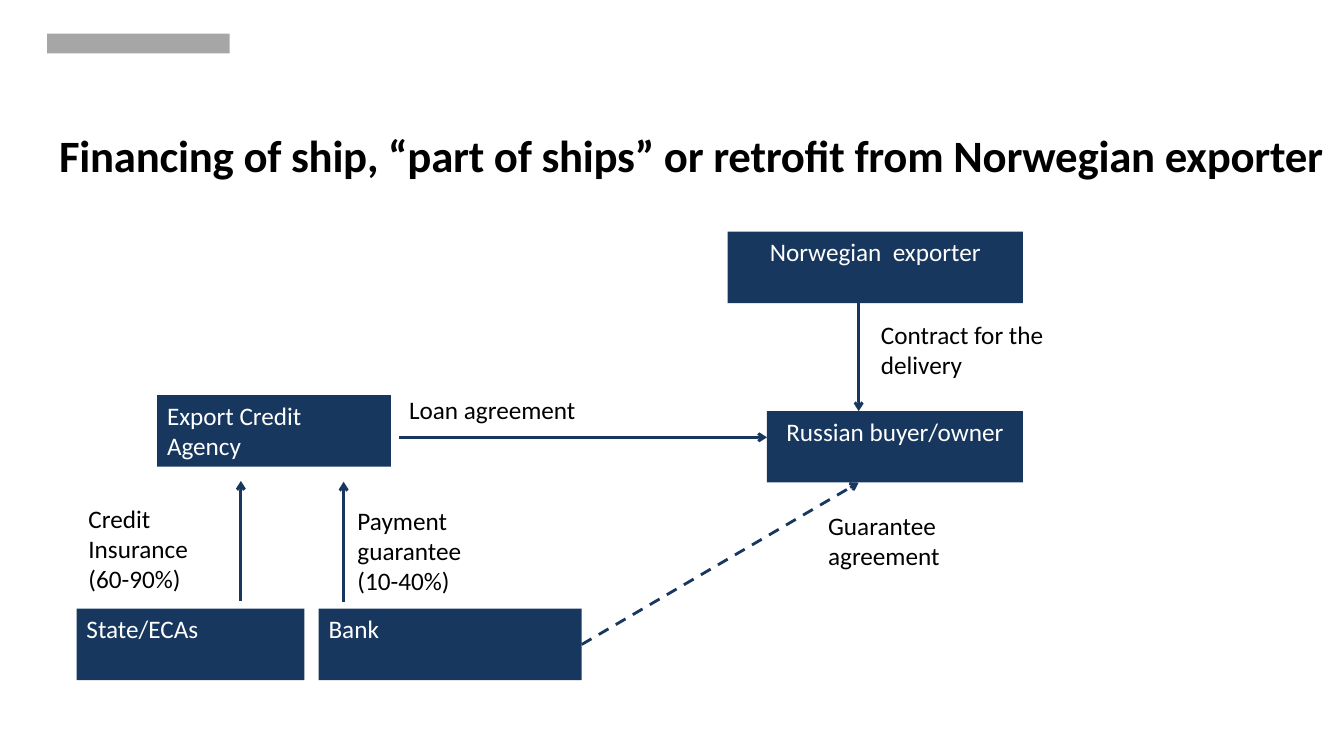
from collections import namedtuple
from dataclasses import dataclass

from lxml.etree import SubElement
from pptx import Presentation
from pptx.dml.color import RGBColor
from pptx.enum.dml import MSO_LINE_DASH_STYLE as Dash
from pptx.enum.shapes import MSO_CONNECTOR as Connector, MSO_SHAPE as Shape
from pptx.enum.text import MSO_ANCHOR as Anchor, PP_ALIGN as Align
from pptx.oxml.ns import qn
from pptx.util import Cm, Pt

Box = namedtuple("Box", "left top width height")


@dataclass(frozen=True)
class Theme:
    navy: RGBColor = RGBColor(0x17, 0x37, 0x5E)
    black: RGBColor = RGBColor(0, 0, 0)
    white: RGBColor = RGBColor(255, 255, 255)
    grey: RGBColor = RGBColor(0xA6, 0xA6, 0xA6)
    font: str = "Calibri"
    title_size: int = 32
    title_spacing: str = "-20"
    body_size: int = 18
    line_width: int = 2


THEME = Theme()
PARTY_HEIGHT = 1.8

PARTIES = [
    ("Norwegian  exporter", 16.41, 0, 7.44, Align.CENTER),
    ("Russian buyer/owner", 17.4, 4.52, 6.45, Align.CENTER),
    ("Export Credit Agency", 2.03, 4.12, 5.89, Align.LEFT),
    ("State/ECAs", 0, 9.5, 5.74, Align.LEFT),
    ("Bank", 6.1, 9.5, 6.63, Align.LEFT),
]
FLOWS = [
    ((19.71, 1.8), (19.71, 4.52), Dash.SOLID),
    ((8.13, 5.18), (17.4, 5.18), Dash.SOLID),
    ((4.14, 9.3), (4.14, 6.28), Dash.SOLID),
    ((6.73, 9.32), (6.73, 6.3), Dash.SOLID),
    ((12.73, 10.4), (19.71, 6.32), Dash.DASH),
]
LABELS = [
    (["Contract for the", "delivery"], Box(20.02, 2.08, 6, 1.8)),
    (["Loan agreement"], Box(8.13, 3.97, 6, 1.02)),
    (["Credit", "Insurance", "(60-90%)"], Box(0.05, 6.71, 4.06, 2.57)),
    (["Payment guarantee", "(10-40%)"], Box(6.83, 6.76, 5.11, 2.57)),
    (["Guarantee agreement"], Box(18.69, 6.89, 5.11, 1.8)),
]


def inside(region, part):
    return Box(region.left + part.left, region.top + part.top, part.width, part.height)


def set_attributes(target, values):
    for name, value in values.items():
        setattr(target, name, value)


def add_span(para, text, color, size=THEME.body_size, bold=False):
    span = para.add_run()
    span.text = text
    set_attributes(span.font, {"name": THEME.font, "size": Pt(size), "bold": bold})
    span.font.color.rgb = color


def add_text_box(page, box, anchor=Anchor.TOP):
    holder = page.shapes.add_textbox(*map(Cm, box))
    set_attributes(holder.text_frame, {"word_wrap": True, "vertical_anchor": anchor})
    return holder


def add_rectangle(page, box, color):
    rectangle = page.shapes.add_shape(Shape.RECTANGLE, *map(Cm, box))
    rectangle.shadow.inherit = False
    rectangle.fill.solid()
    rectangle.fill.fore_color.rgb = color
    rectangle.line.fill.background()
    return rectangle


def add_party(page, box, name, alignment):
    frame = add_rectangle(page, box, THEME.navy).text_frame
    set_attributes(frame, {"word_wrap": True, "vertical_anchor": Anchor.TOP})
    para = frame.paragraphs[0]
    para.alignment = alignment
    add_span(para, name, THEME.white)


def add_flow(page, region, start, end, dash):
    points = [Cm(origin + offset) for point in (start, end)
              for origin, offset in zip(region, point)]
    flow = page.shapes.add_connector(Connector.STRAIGHT, *points)
    flow.line.color.rgb = THEME.navy
    set_attributes(flow.line, {"width": Pt(THEME.line_width), "dash_style": dash})
    properties = flow.element.spPr
    SubElement(properties.find(qn("a:ln")), qn("a:tailEnd"), type="arrow")
    SubElement(properties, qn("a:effectLst"))


def add_label(page, box, lines):
    frame = add_text_box(page, box).text_frame
    for index, line in enumerate(lines):
        para = frame.add_paragraph() if index else frame.paragraphs[0]
        add_span(para, line, THEME.black)


def draw_brand(page, box):
    add_rectangle(page, box, THEME.grey)


def draw_title(page, box):
    holder = add_text_box(page, box, Anchor.MIDDLE)
    para = holder.text_frame.paragraphs[0]
    para.alignment = Align.CENTER
    title = "Financing of ship, “part of ships” or retrofit from Norwegian exporter"
    add_span(para, title, THEME.black, THEME.title_size, True)
    for properties in holder.element.iter(qn("a:rPr")):
        properties.set("spc", THEME.title_spacing)


def draw_diagram(page, region):
    for name, left, top, width, alignment in PARTIES:
        box = inside(region, Box(left, top, width, PARTY_HEIGHT))
        add_party(page, box, name, alignment)
    for start, end, dash in FLOWS:
        add_flow(page, region, start, end, dash)
    for lines, part in LABELS:
        add_label(page, inside(region, part), lines)


def main():
    deck = Presentation()
    set_attributes(deck, {"slide_width": Cm(33.87), "slide_height": Cm(19.05)})
    page = deck.slides.add_slide(deck.slide_layouts[6])
    draw_title(page, Box(0.98, 2.2, 32.87, 3.4))
    draw_diagram(page, Box(1.93, 5.84, 23.85, 11.3))
    draw_brand(page, Box(1.19, 0.85, 4.6, 0.5))
    deck.save("out.pptx")


if __name__ == "__main__":
    main()
